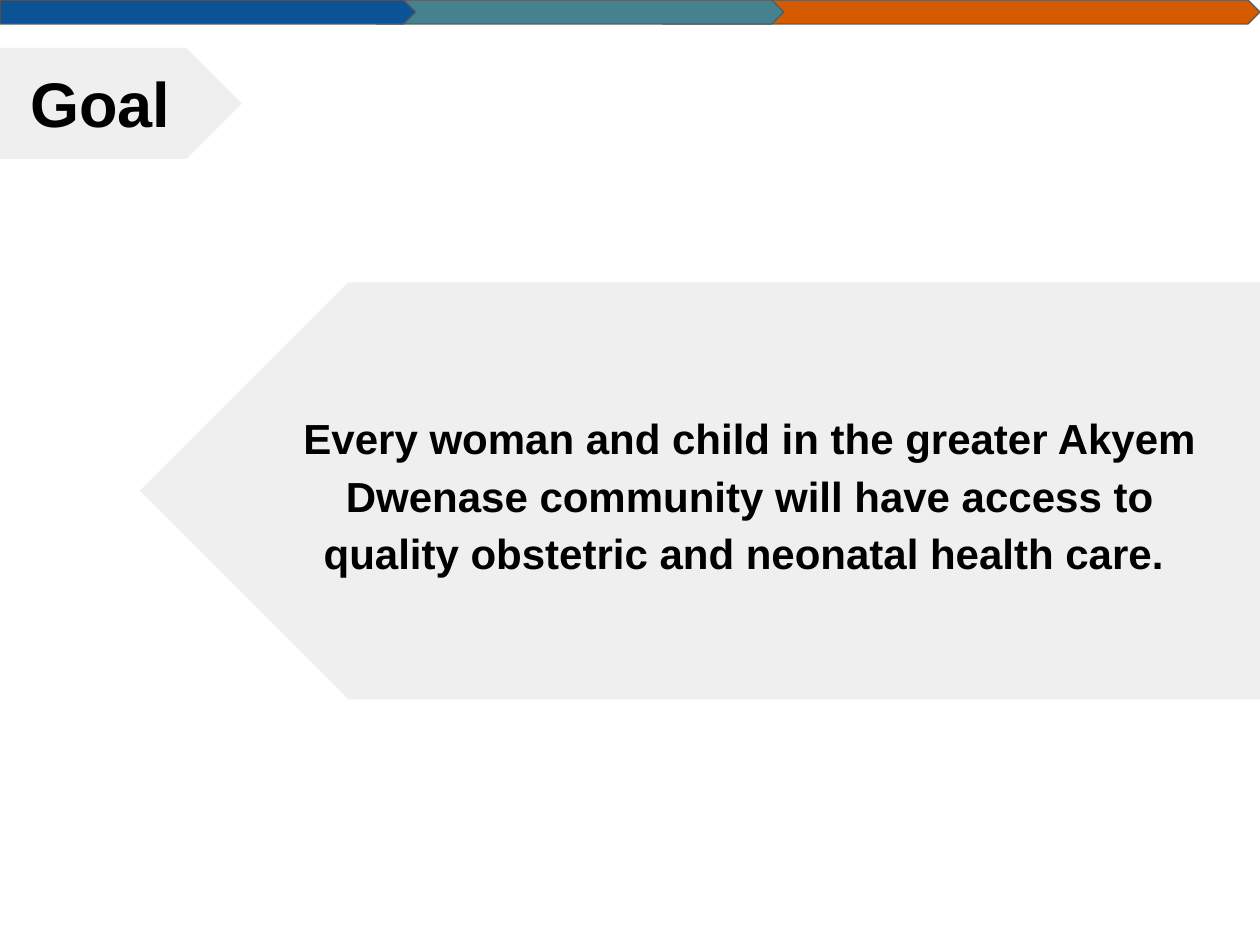
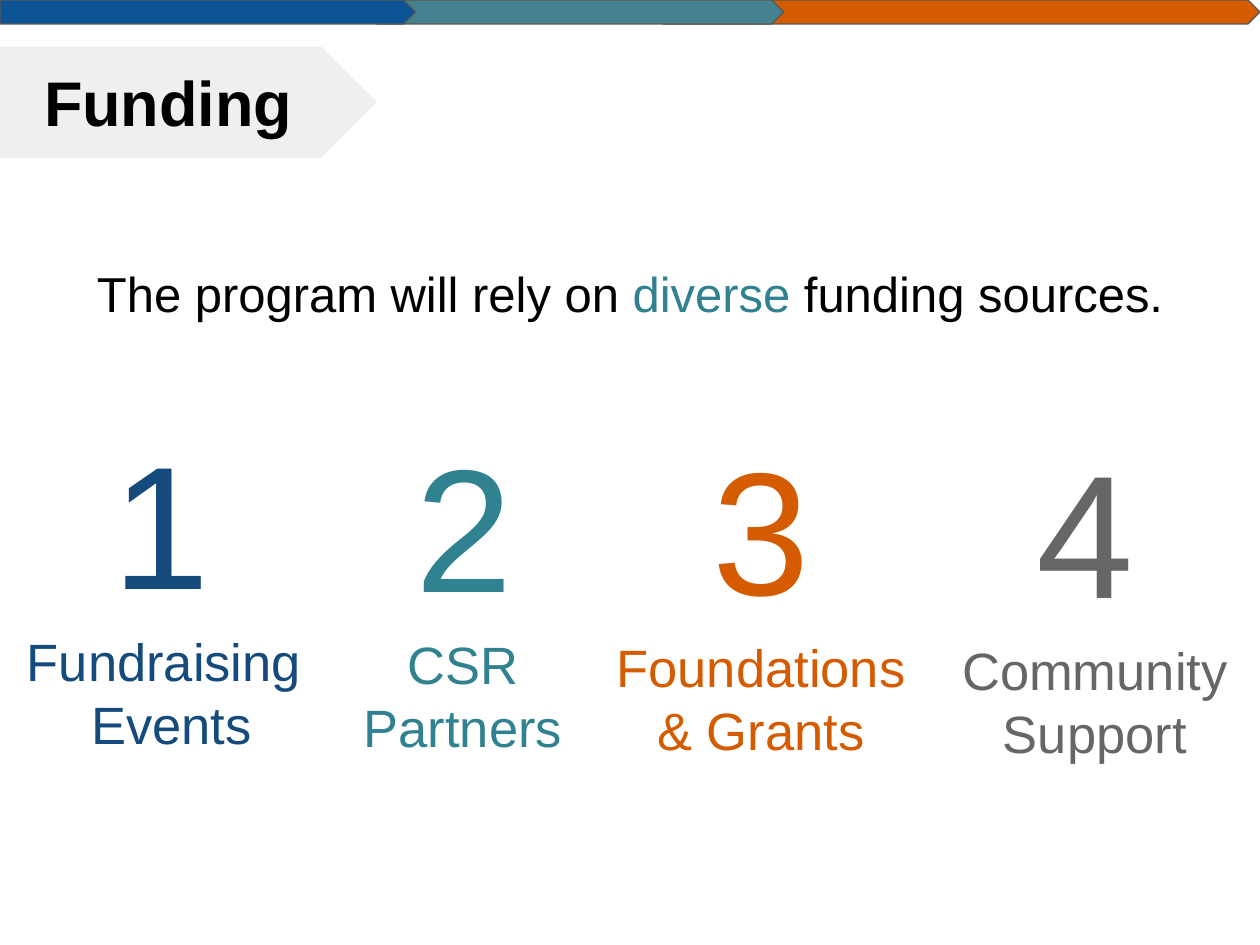
"""Build the goal and funding slides of a health program deck."""
import dataclasses

import pptx
import pptx.dml.color
import pptx.enum.shapes
import pptx.enum.text
import pptx.presentation
import pptx.shapes.autoshape
import pptx.slide
import pptx.util

Pt = pptx.util.Pt
Kind = pptx.enum.shapes.MSO_SHAPE
Align = pptx.enum.text.PP_ALIGN
Anchor = pptx.enum.text.MSO_ANCHOR
Size = pptx.enum.text.MSO_AUTO_SIZE

FONT = "Arial"
BLACK, PALE, EDGE, GREY = "000000", "EFEFEF", "595959", "666666"
BLUE, TEAL, ORANGE = "0B5394", "45818E", "D45B00"
NAVY, AQUA = "154A7C", "308290"
FRAME = {
    "word_wrap": True, "auto_size": Size.NONE,
    "margin_left": Pt(7.2), "margin_right": Pt(7.2),
    "margin_top": Pt(7.2), "margin_bottom": Pt(7.2),
}
Run = tuple[str, str]


@dataclasses.dataclass(frozen=True)
class Box:
    left: float
    top: float
    width: float
    height: float

    def place(self) -> tuple[pptx.util.Length, ...]:
        return tuple(Pt(side) for side in dataclasses.astuple(self))


@dataclasses.dataclass(frozen=True)
class Arrow:
    box: Box
    fill: str
    kind: Kind = Kind.PENTAGON
    edge: str = ""
    turn: float = 0


@dataclasses.dataclass(frozen=True)
class Style:
    size: float
    bold: bool = False
    align: Align = Align.CENTER
    anchor: Anchor = Anchor.TOP
    line: float = 1.0
    after: float = 0


@dataclasses.dataclass(frozen=True)
class Source:
    color: str
    digit: float
    label: float
    width: float
    lines: tuple[str, ...]


BAND = (
    Arrow(Box(378.7, 0, 341.3, 13.7), ORANGE, edge=EDGE),
    Arrow(Box(215.3, 0, 232.6, 13.7), TEAL, Kind.CHEVRON, EDGE),
    Arrow(Box(0, 0, 237.6, 13.7), BLUE, edge=EDGE),
)
HEAD = Style(36, bold=True, anchor=Anchor.MIDDLE)
GOAL = Style(24, bold=True, anchor=Anchor.MIDDLE, line=1.15)
LEAD = Style(28, line=1.15, after=10)
DIGIT, LABEL = Style(100), Style(30)
TOP, DROP, GAP = 229.8, 1.75, 122.3
SOURCES = (
    Source(NAVY, 46.8, 4.3, 187.2, ("Fundraising ", "Events")),
    Source(AQUA, 219.6, 190.1, 149, ("CSR", "Partners")),
    Source(ORANGE, 389.5, 341.3, 187.2, ("Foundations ", "& Grants")),
    Source(GREY, 574.6, 532.1, 187.2, ("Community", "Support")),
)


def shade(code: str) -> pptx.dml.color.RGBColor:
    return pptx.dml.color.RGBColor.from_string(code)


def apply(target: object, values: dict[str, object]) -> None:
    for name, value in values.items():
        setattr(target, name, value)


def draw(slide: pptx.slide.Slide, arrow: Arrow) -> None:
    shape = slide.shapes.add_shape(arrow.kind, *arrow.box.place())
    apply(shape, {"rotation": arrow.turn})
    shape.shadow.inherit = False
    shape.fill.solid()
    shape.fill.fore_color.rgb = shade(arrow.fill)
    if arrow.edge:
        shape.line.color.rgb = shade(arrow.edge)
        shape.line.width = Pt(0.75)
    else:
        shape.line.fill.background()


def write(shape: pptx.shapes.autoshape.Shape, style: Style, *lines: list[Run]) -> None:
    frame = shape.text_frame
    apply(frame, FRAME | {"vertical_anchor": style.anchor})
    for place, line in enumerate(lines):
        para = frame.add_paragraph() if place else frame.paragraphs[0]
        apply(para, {
            "alignment": style.align, "line_spacing": style.line,
            "space_before": Pt(0), "space_after": Pt(style.after),
        })
        for text, color in line:
            run = para.add_run()
            run.text = text
            apply(run.font, {"name": FONT, "size": Pt(style.size), "bold": style.bold})
            run.font.color.rgb = shade(color)


def note(slide: pptx.slide.Slide, box: Box, style: Style, *lines: list[Run]) -> None:
    write(slide.shapes.add_textbox(*box.place()), style, *lines)


def start(deck: pptx.presentation.Presentation, text: str, tag: Box, box: Box,
          style: Style) -> pptx.slide.Slide:
    slide = deck.slides.add_slide(deck.slide_layouts[5])
    for arrow in (*BAND, Arrow(tag, PALE)):
        draw(slide, arrow)
    title = slide.shapes.title
    apply(title, dict(zip(("left", "top", "width", "height"), box.place())))
    write(title, style, [(text, BLACK)])
    title.element.getparent().append(title.element)
    return slide


def goal(deck: pptx.presentation.Presentation) -> None:
    slide = start(deck, "Goal", Box(0, 27.4, 138.2, 63.4),
                  Box(2.9, 26.6, 108.7, 63.4), HEAD)
    draw(slide, Arrow(Box(79.9, 161.3, 640.1, 238.3), PALE, turn=180))
    text = ("Every woman and child in the greater Akyem Dwenase community "
            "will have access to quality obstetric and neonatal health care. ")
    note(slide, Box(164.9, 178.6, 527, 204.5), GOAL, [(text, BLACK)])


def funding(deck: pptx.presentation.Presentation) -> None:
    slide = start(deck, "Funding", Box(0, 26.6, 215.3, 63.4),
                  Box(18, 28.1, 195.8, 59.8),
                  dataclasses.replace(HEAD, align=Align.LEFT))
    note(slide, Box(0, 138.2, 720, 55.4), LEAD, [
        ("The program will rely on ", BLACK),
        ("diverse ", AQUA),
        ("funding sources.", BLACK),
    ])
    for place, source in enumerate(SOURCES):
        top = TOP + place * DROP
        note(slide, Box(source.digit, top, 90.7, 116.6), DIGIT,
             [(str(place + 1), source.color)])
        note(slide, Box(source.label, top + GAP, source.width, 81.4), LABEL,
             *([(line, source.color)] for line in source.lines))


def main() -> None:
    deck = pptx.Presentation()
    apply(deck, {"slide_width": Pt(720), "slide_height": Pt(540)})
    goal(deck)
    funding(deck)
    deck.save("out.pptx")


if __name__ == "__main__":
    main()
